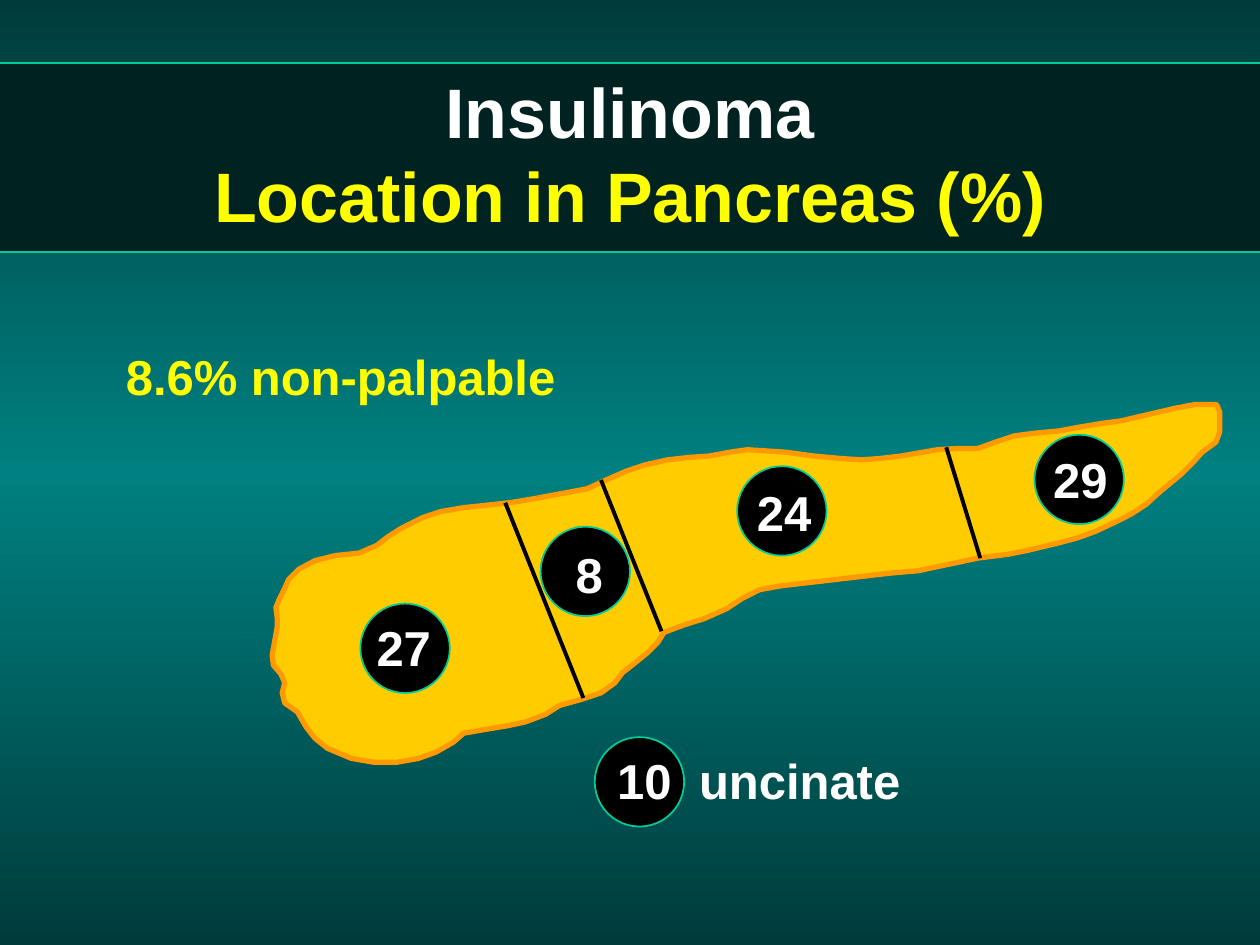
from copy import deepcopy

from lxml import etree
from pptx import Presentation
from pptx.dml.color import RGBColor
from pptx.enum.shapes import MSO_CONNECTOR, MSO_SHAPE
from pptx.enum.text import MSO_ANCHOR, MSO_AUTO_SIZE, PP_ALIGN
from pptx.oxml.ns import qn
from pptx.util import Pt

STRAIGHT = MSO_CONNECTOR.STRAIGHT
RECTANGLE, OVAL = MSO_SHAPE.RECTANGLE, MSO_SHAPE.OVAL
MIDDLE, CENTER = MSO_ANCHOR.MIDDLE, PP_ALIGN.CENTER
GROW = MSO_AUTO_SIZE.SHAPE_TO_FIT_TEXT

PX = 9144
COLORS = {
    "edge": "003B3B", "glow": "008080", "band": "002221", "rim": "00CC99",
    "black": "000000", "white": "FFFFFF", "yellow": "FFFF00",
    "organ": "FFCC00", "organ_rim": "FF9900",
}
PANCREAS = [
    (965, 321), (949, 321), (933, 324), (890, 334), (875, 336), (857, 339),
    (841, 342), (820, 344), (805, 346), (790, 351), (776, 356), (760, 356),
    (744, 357), (715, 362), (698, 364), (684, 365), (668, 364), (646, 362),
    (624, 359), (609, 358), (593, 357), (579, 359), (563, 362), (548, 363),
    (530, 365), (512, 369), (497, 374), (481, 381), (466, 388), (423, 396),
    (405, 399), (368, 403), (350, 406), (335, 411), (319, 419), (308, 426),
    (299, 433), (285, 439), (266, 441), (250, 445), (237, 452), (229, 460),
    (226, 467), (222, 475), (219, 482), (220, 490), (220, 498), (216, 520),
    (217, 528), (223, 535), (226, 542), (224, 550), (226, 558), (236, 565),
    (243, 577), (250, 586), (260, 594), (279, 602), (297, 605), (315, 605),
    (332, 602), (346, 597), (360, 589), (368, 582), (385, 579), (403, 576),
    (417, 573), (433, 567), (444, 560), (462, 555), (477, 550), (488, 542),
    (494, 534), (503, 527), (514, 518), (522, 510), (527, 502), (543, 496),
    (559, 491), (577, 483), (589, 475), (603, 468), (620, 465), (637, 463),
    (706, 455), (729, 453), (743, 450), (762, 446), (776, 443), (800, 440),
    (815, 437), (840, 431), (855, 427), (869, 422), (884, 415), (898, 408),
    (910, 400), (921, 390), (938, 376), (947, 367), (954, 359), (965, 351),
    (968, 343), (968, 335), (968, 327), (966, 322),
]
DIVIDERS = [(401, 399, 463, 554), (477, 381, 525, 501), (751, 355, 778, 443)]
DISCS = [(472, 585), (821, 345), (585, 370), (429, 418), (286, 479)]
LABELS = [
    ("27", 289, 485, 64, "white"),
    ("8", 447, 427, 42, "white"),
    ("24", 591, 378, 64, "white"),
    ("29", 826, 352, 64, "white"),
    ("8.6% non-palpable", 90, 270, 365, "yellow"),
]


class SlideBuilder:
    """Holds the slide style and draws each kind of element on the page."""

    def __init__(self, page, font="Arial"):
        self.page = page
        self.font = font

    def color(self, name):
        return RGBColor.from_string(COLORS[name])

    def background(self, edge, middle):
        fill = self.page.background.fill
        fill.gradient()
        fill.gradient_angle = 90
        first, second = fill.gradient_stops
        first.color.rgb, first.position = self.color(edge), 0
        second.color.rgb, second.position = self.color(middle), 0.5
        start, center = self.page._element.iter(qn("a:gs"))
        end = deepcopy(start)
        end.set("pos", "100000")
        center.addnext(end)

    def paint(self, shape, fill, line, weight):
        shape.shadow.inherit = False
        shape.fill.solid()
        shape.fill.fore_color.rgb = self.color(fill)
        shape.line.color.rgb = self.color(line)
        shape.line.width = Pt(weight)
        return shape

    def shape(self, kind, x, y, width, height, fill, line, weight):
        shape = self.page.shapes.add_shape(
            kind, x * PX, y * PX, width * PX, height * PX)
        return self.paint(shape, fill, line, weight)

    def outline(self, points, fill, line, weight):
        builder = self.page.shapes.build_freeform(*points[0], scale=PX)
        builder.add_line_segments(points[1:], close=True)
        return self.paint(builder.convert_to_shape(), fill, line, weight)

    def line(self, x1, y1, x2, y2, color, weight):
        line = self.page.shapes.add_connector(
            STRAIGHT, x1 * PX, y1 * PX, x2 * PX, y2 * PX)
        line.line.color.rgb = self.color(color)
        line.line.width = Pt(weight)
        etree.SubElement(line._element.spPr, qn("a:effectLst"))

    def span(self, para, text, size, color):
        span = para.add_run()
        span.text = text
        span.font.name = self.font
        span.font.size = Pt(size)
        span.font.bold = True
        span.font.color.rgb = self.color(color)

    def title(self, x, y, width, height, lines, size):
        box = self.page.shapes.title
        box.left, box.top = x * PX, y * PX
        box.width, box.height = width * PX, height * PX
        box.text_frame.vertical_anchor = MIDDLE
        para = box.text_frame.paragraphs[0]
        para.alignment = CENTER
        for index, (text, color) in enumerate(lines):
            if index:
                para.add_line_break()
            self.span(para, text, size, color)
        return box

    def label(self, text, x, y, width, color, tab=0):
        box = self.page.shapes.add_textbox(x * PX, y * PX, width * PX, 57 * PX)
        box.text_frame.word_wrap = False
        box.text_frame.auto_size = GROW
        para = box.text_frame.paragraphs[0]
        if tab:
            stops = etree.SubElement(para._p.get_or_add_pPr(), qn("a:tabLst"))
            etree.SubElement(stops, qn("a:tab"), pos=str(tab * PX), algn="l")
        self.span(para, text, 28, color)


def main():
    deck = Presentation()
    deck.slide_width, deck.slide_height = 1000 * PX, 750 * PX
    slide = SlideBuilder(deck.slides.add_slide(deck.slide_layouts[5]))
    slide.background("edge", "glow")
    band = slide.shape(RECTANGLE, -58, 50, 1108, 150, "band", "rim", 0.75)
    title = slide.title(0, 50, 1000, 142, [
        ("Insulinoma", "white"), ("Location in Pancreas (%)", "yellow")], 40)
    title._element.addprevious(band._element)
    slide.outline(PANCREAS, "organ", "organ_rim", 3)
    for divider in DIVIDERS:
        slide.line(*divider, "black", 2.25)
    for x, y in DISCS:
        slide.shape(OVAL, x, y, 71, 71, "black", "rim", 1)
    for label in LABELS:
        slide.label(*label)
    slide.label("10\tuncinate", 480, 591, 248, "white", tab=65)
    deck.save("out.pptx")


if __name__ == "__main__":
    main()
